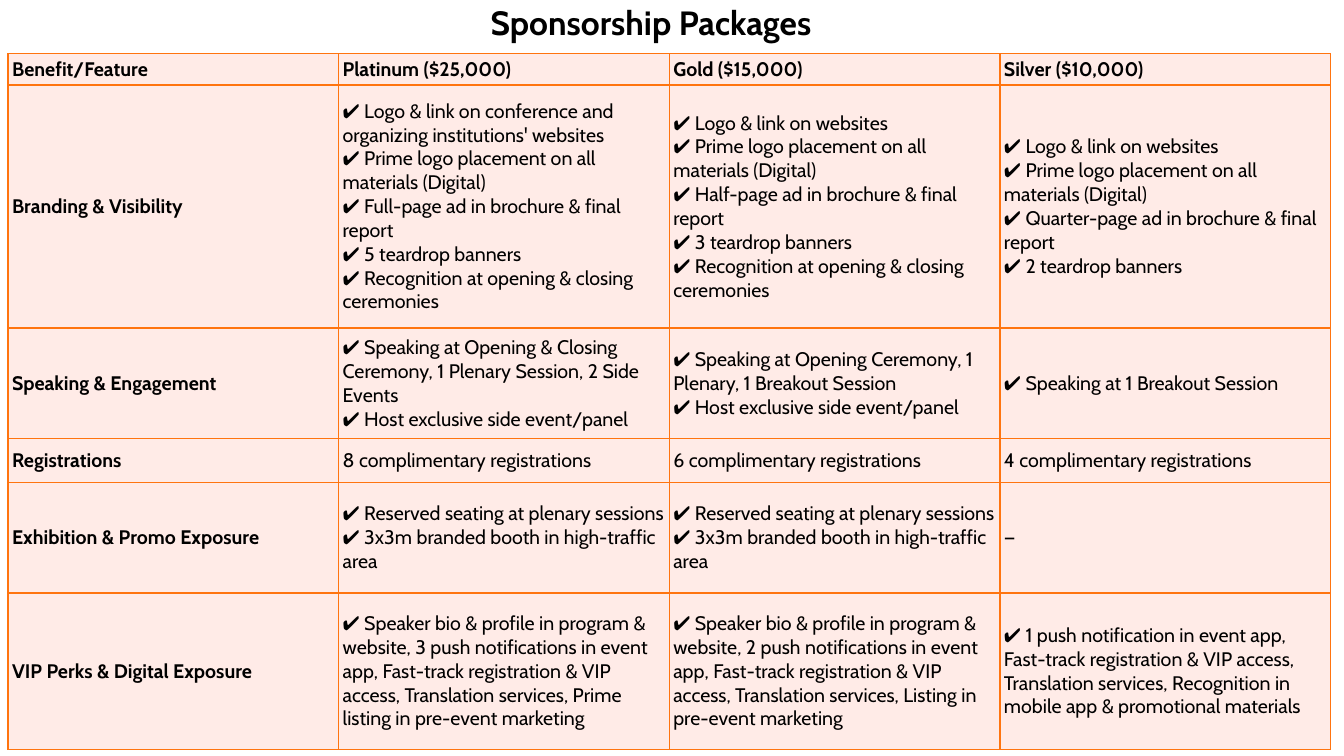
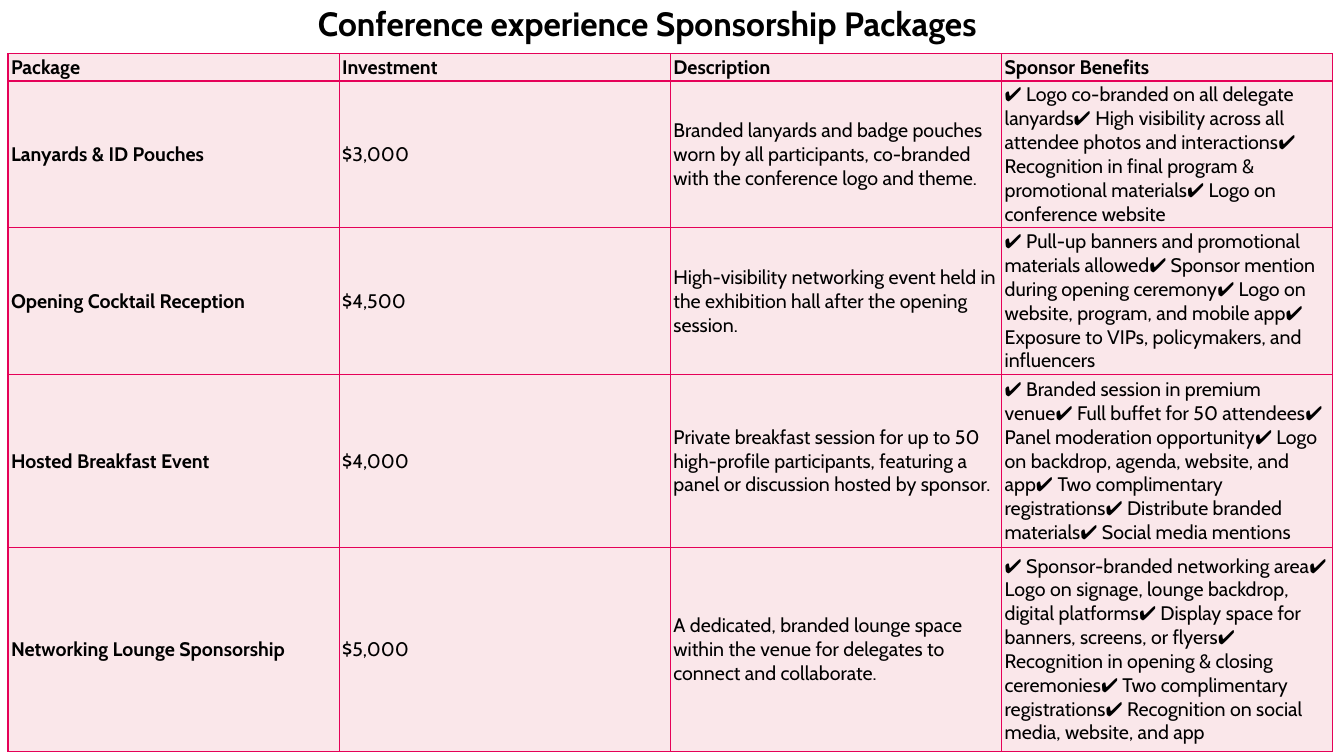
"""Build two slides of conference sponsorship packages."""
from lxml import etree
from pptx import Presentation
from pptx.dml.color import RGBColor
from pptx.enum import text
from pptx.oxml import ns
from pptx.util import Pt

FONT = "Cabin"
BLACK = RGBColor(0x00, 0x00, 0x00)
ORANGE = RGBColor(0xFF, 0x74, 0x0F)
PEACH = RGBColor(0xFF, 0xEB, 0xE7)
CRIMSON = RGBColor(0xE5, 0x01, 0x58)
ROSE = RGBColor(0xFA, 0xE7, 0xEA)
TABLE_LEFT, TABLE_TOP = 5.7, 38.3

TIERS = [
    ["Benefit/Feature", "Platinum ($25,000)", "Gold ($15,000)", "Silver ($10,000)"],
    ["Branding & Visibility",
     ["✔ Logo & link on conference and organizing institutions' websites",
      "✔ Prime logo placement on all materials (Digital)",
      "✔ Full-page ad in brochure & final report",
      "✔ 5 teardrop banners",
      "✔ Recognition at opening & closing ceremonies"],
     ["✔ Logo & link on websites",
      "✔ Prime logo placement on all materials (Digital)",
      "✔ Half-page ad in brochure & final report",
      "✔ 3 teardrop banners",
      "✔ Recognition at opening & closing ceremonies"],
     ["✔ Logo & link on websites",
      "✔ Prime logo placement on all materials (Digital)",
      "✔ Quarter-page ad in brochure & final report",
      "✔ 2 teardrop banners"]],
    ["Speaking & Engagement",
     ["✔ Speaking at Opening & Closing Ceremony, 1 Plenary Session, 2 Side Events",
      "✔ Host exclusive side event/panel"],
     ["✔ Speaking at Opening Ceremony, 1 Plenary, 1 Breakout Session",
      "✔ Host exclusive side event/panel"],
     "✔ Speaking at 1 Breakout Session"],
    ["Registrations", "8 complimentary registrations",
     "6 complimentary registrations", "4 complimentary registrations"],
    ["Exhibition & Promo Exposure",
     ["✔ Reserved seating at plenary sessions",
      "✔ 3x3m branded booth in high-traffic area"],
     ["✔ Reserved seating at plenary sessions",
      "✔ 3x3m branded booth in high-traffic area"],
     "—"],
    ["VIP Perks & Digital Exposure",
     "✔ Speaker bio & profile in program & website, 3 push notifications in event app, "
     "Fast-track registration & VIP access, Translation services, "
     "Prime listing in pre-event marketing",
     "✔ Speaker bio & profile in program & website, 2 push notifications in event app, "
     "Fast-track registration & VIP access, Translation services, "
     "Listing in pre-event marketing",
     "✔ 1 push notification in event app, Fast-track registration & VIP access, "
     "Translation services, Recognition in mobile app & promotional materials"],
]

EXPERIENCES = [
    ["Package", "Investment", "Description", "Sponsor Benefits"],
    ["Lanyards & ID Pouches", "$3,000",
     "Branded lanyards and badge pouches worn by all participants, "
     "co-branded with the conference logo and theme.",
     "✔ Logo co-branded on all delegate lanyards"
     "✔ High visibility across all attendee photos and interactions"
     "✔ Recognition in final program & promotional materials"
     "✔ Logo on conference website"],
    ["Opening Cocktail Reception", "$4,500",
     "High-visibility networking event held in the exhibition hall "
     "after the opening session.",
     "✔ Pull-up banners and promotional materials allowed"
     "✔ Sponsor mention during opening ceremony"
     "✔ Logo on website, program, and mobile app"
     "✔ Exposure to VIPs, policymakers, and influencers"],
    ["Hosted Breakfast Event", "$4,000",
     "Private breakfast session for up to 50 high-profile participants, "
     "featuring a panel or discussion hosted by sponsor.",
     "✔ Branded session in premium venue"
     "✔ Full buffet for 50 attendees"
     "✔ Panel moderation opportunity"
     "✔ Logo on backdrop, agenda, website, and app"
     "✔ Two complimentary registrations"
     "✔ Distribute branded materials"
     "✔ Social media mentions"],
    ["Networking Lounge Sponsorship", "$5,000",
     "A dedicated, branded lounge space within the venue for delegates "
     "to connect and collaborate.",
     "✔ Sponsor-branded networking area"
     "✔ Logo on signage, lounge backdrop, digital platforms"
     "✔ Display space for banners, screens, or flyers"
     "✔ Recognition in opening & closing ceremonies"
     "✔ Two complimentary registrations"
     "✔ Recognition on social media, website, and app"],
]

PAGES = [
    {"title": "Sponsorship Packages", "title_at": (20, 4.5), "rows": TIERS,
     "heights": [22.5, 173.5, 79.2, 31, 79.2, 111.5], "column": 236.2,
     "inset": 2.9, "fill": PEACH, "line": ORANGE},
    {"title": "Conference experience Sponsorship Packages", "title_at": (17.3, 5),
     "rows": EXPERIENCES, "heights": [19.5, 104.8, 104.8, 123.6, 145.6],
     "column": 236.6, "inset": 2.2, "fill": ROSE, "line": CRIMSON},
]


def set_font(para, size, bold):
    para.font.name = FONT
    para.font.size = Pt(size)
    para.font.bold = bold
    para.font.color.rgb = BLACK


def add_title(page, title, left, top):
    box = page.shapes.add_textbox(Pt(left), Pt(top), Pt(890), Pt(34))
    frame = box.text_frame
    frame.word_wrap = True
    frame.margin_left = frame.margin_right = frame.margin_top = frame.margin_bottom = 0
    para = frame.paragraphs[0]
    para.text = title
    para.alignment = text.PP_ALIGN.CENTER
    para.line_spacing = 0.9
    set_font(para, 24, True)


def add_borders(cell, color):
    properties = cell._tc.get_or_add_tcPr()
    for index, side in enumerate(("lnL", "lnR", "lnT", "lnB")):
        line = etree.Element(ns.qn(f"a:{side}"), w=str(Pt(1)))
        fill = etree.SubElement(line, ns.qn("a:solidFill"))
        etree.SubElement(fill, ns.qn("a:srgbClr"), val=str(color))
        properties.insert(index, line)


def fill_cell(cell, content, bold, design):
    cell.fill.solid()
    cell.fill.fore_color.rgb = design["fill"]
    add_borders(cell, design["line"])
    cell.margin_left = cell.margin_right = Pt(design["inset"])
    cell.margin_top = cell.margin_bottom = Pt(1.4)
    cell.vertical_anchor = text.MSO_ANCHOR.MIDDLE
    lines = [content] if isinstance(content, str) else content
    cell.text_frame.text = "\n".join(lines)
    for para in cell.text_frame.paragraphs:
        set_font(para, 14, bold)


def add_package_table(page, design):
    rows, heights = design["rows"], design["heights"]
    count = len(rows[0])
    table = page.shapes.add_table(
        len(rows), count, Pt(TABLE_LEFT), Pt(TABLE_TOP),
        Pt(design["column"] * count), Pt(sum(heights))).table
    table.first_row = table.horz_banding = False
    for column in table.columns:
        column.width = Pt(design["column"])
    for r, (row, height) in enumerate(zip(rows, heights)):
        table.rows[r].height = Pt(height)
        for c, content in enumerate(row):
            fill_cell(table.cell(r, c), content, r == 0 or c == 0, design)


def main():
    deck = Presentation()
    deck.slide_width, deck.slide_height = Pt(960), Pt(540)
    for design in PAGES:
        page = deck.slides.add_slide(deck.slide_layouts[6])
        add_title(page, design["title"], *design["title_at"])
        add_package_table(page, design)
    deck.save("out.pptx")


if __name__ == "__main__":
    main()
